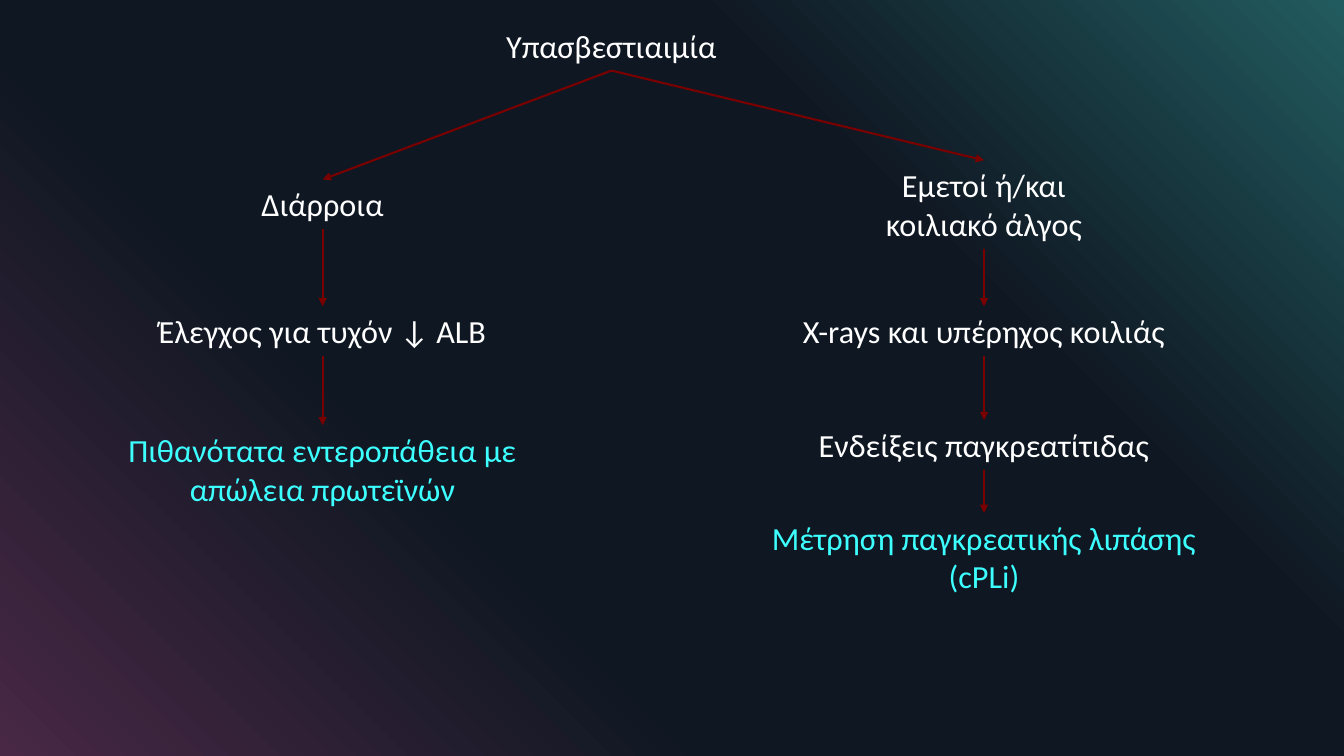
from copy import deepcopy

from lxml import etree
from pptx import Presentation
from pptx.dml.color import RGBColor
from pptx.enum.shapes import MSO_CONNECTOR
from pptx.enum.text import MSO_ANCHOR, MSO_AUTO_SIZE, PP_ALIGN
from pptx.oxml.ns import qn
from pptx.util import Inches, Pt

STRAIGHT = MSO_CONNECTOR.STRAIGHT
TOP = MSO_ANCHOR.TOP
CENTER = PP_ALIGN.CENTER
FIT_SHAPE = MSO_AUTO_SIZE.SHAPE_TO_FIT_TEXT
TITLE_ONLY = 5
TOP_SITE, BOTTOM_SITE = 0, 2

THEME = {
    "font": "Calibri",
    "size": Pt(23),
    "text": RGBColor.from_string("FFFFFF"),
    "conclusion": RGBColor.from_string("3DFFFF"),
    "arrow": RGBColor.from_string("7A0000"),
    "arrow_width": Pt(1.5),
    "background": [(0, "482845"), (0.34, "0F1722"), (0.69, "0F1722"), (1, "225B5F")],
}
ONE_LINE, TWO_LINES = 0.49, 0.88

# Each branch: centre, then its steps as (top, width, height, text)
BRANCHES = [
    (3.2, [
        (1.78, 1.42, ONE_LINE, "Διάρροια"),
        (3.04, 3.48, ONE_LINE, "Έλεγχος για τυχόν ↓ ALB"),
        (4.22, 4.09, TWO_LINES, "Πιθανότατα εντεροπάθεια με\nαπώλεια πρωτεϊνών"),
    ]),
    (9.76, [
        (1.59, 2.16, TWO_LINES, "Εμετοί ή/και\nκοιλιακό άλγος"),
        (3.04, 3.84, ONE_LINE, "X-rays και υπέρηχος κοιλιάς"),
        (4.17, 3.58, ONE_LINE, "Ενδείξεις παγκρεατίτιδας"),
        (5.09, 4.5, TWO_LINES, "Μέτρηση παγκρεατικής λιπάσης (cPLi)"),
    ]),
]


def write_step(shape, text, color, wrap=False):
    """Fill a title or text box with one centred paragraph in the theme font."""
    frame_format = {"word_wrap": wrap, "auto_size": FIT_SHAPE, "vertical_anchor": TOP}
    for name, value in frame_format.items():
        setattr(shape.text_frame, name, value)
    paragraph = shape.text_frame.paragraphs[0]
    paragraph.text = text
    paragraph.alignment = CENTER
    for run in paragraph.runs:
        for name, value in {"name": THEME["font"], "size": THEME["size"]}.items():
            setattr(run.font, name, value)
        run.font.color.rgb = color


def add_arrow(slide, start, end):
    arrow = slide.shapes.add_connector(STRAIGHT, 0, 0, 0, 0)
    arrow.begin_connect(start, BOTTOM_SITE)
    arrow.end_connect(end, TOP_SITE)
    arrow.line.color.rgb = THEME["arrow"]
    arrow.line.width = THEME["arrow_width"]
    properties = arrow.element.spPr
    etree.SubElement(properties.find(qn("a:ln")), qn("a:tailEnd"), type="triangle")
    etree.SubElement(properties, qn("a:effectLst"))


presentation = Presentation()
presentation.slide_width = Inches(13.33)
presentation.slide_height = Inches(7.5)
slide = presentation.slides.add_slide(presentation.slide_layouts[TITLE_ONLY])

# Background gradient from the lower left to the upper right
background = slide.background.fill
background.gradient()
background.gradient_angle = 45
stop_list = next(slide.element.iter(qn("a:gsLst")))
while len(stop_list) < len(THEME["background"]):
    stop_list.append(deepcopy(stop_list[0]))
for stop, (position, color) in zip(background.gradient_stops, THEME["background"]):
    stop.position = position
    stop.color.rgb = RGBColor.from_string(color)

# Starting point of the diagram
title = slide.shapes.title
title_box = {"left": 4.91, "top": 0.21, "width": 2.31, "height": ONE_LINE}
for name, value in title_box.items():
    setattr(title, name, Inches(value))
write_step(title, "Υπασβεστιαιμία", THEME["text"])

# Branches, each ending in a highlighted conclusion
for center, steps in BRANCHES:
    previous = title
    for step in steps:
        top, width, height, text = step
        box = slide.shapes.add_textbox(
            Inches(center - width / 2), Inches(top), Inches(width), Inches(height))
        color = THEME["conclusion" if step is steps[-1] else "text"]
        wraps = height == TWO_LINES and "\n" not in text
        write_step(box, text, color, wraps)
        add_arrow(slide, previous, box)
        previous = box

presentation.save("out.pptx")
